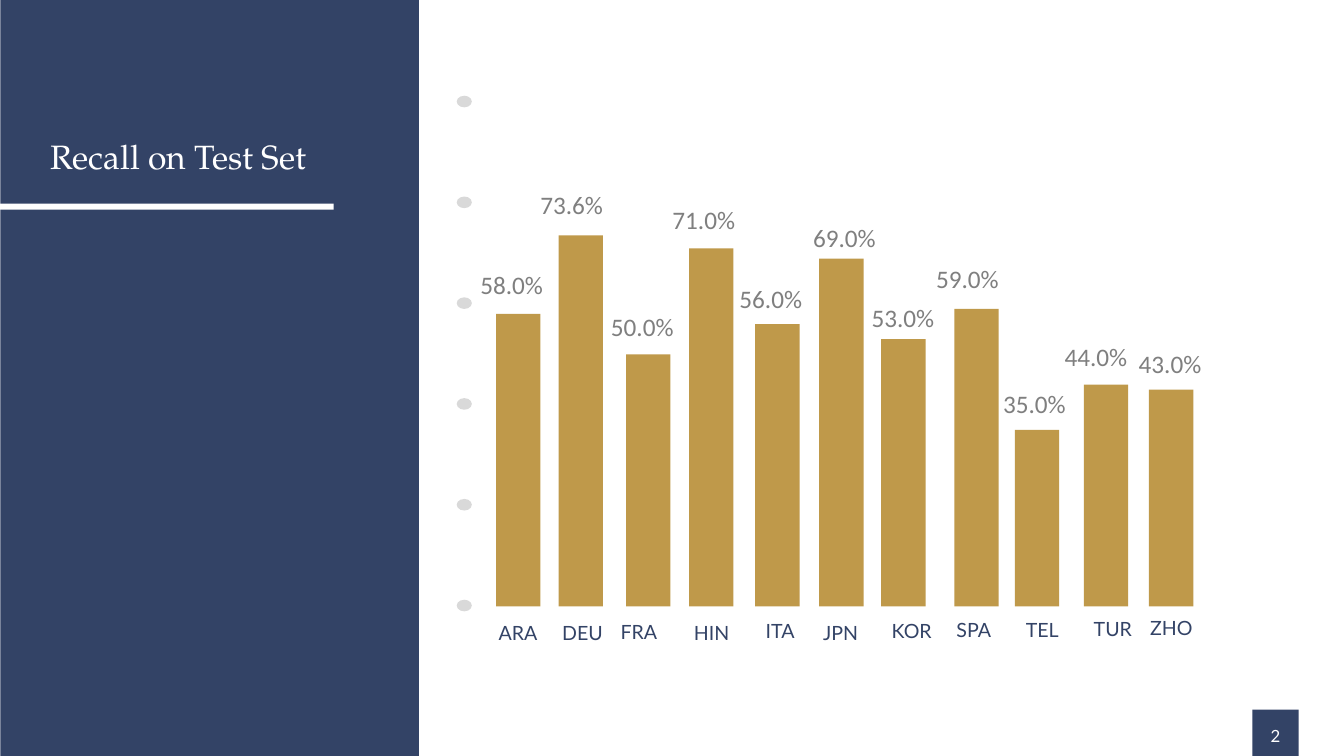
"""Build a slide with a drawn column diagram of recall per language."""
import pptx
import pptx.dml.color
import pptx.enum.shapes
import pptx.enum.text
import pptx.util

NAVY = pptx.dml.color.RGBColor(0x33, 0x43, 0x66)
GOLD = pptx.dml.color.RGBColor(0xBF, 0x99, 0x4A)
GREY = pptx.dml.color.RGBColor(0x7F, 0x7F, 0x7F)
SILVER = pptx.dml.color.RGBColor(0xD9, 0xD9, 0xD9)
WHITE = pptx.dml.color.RGBColor(0xFF, 0xFF, 0xFF)

SHAPE = pptx.enum.shapes.MSO_SHAPE
ALIGN = pptx.enum.text.PP_ALIGN
FIT = pptx.enum.text.MSO_AUTO_SIZE
WIDTH, HEIGHT = 26.66, 15
BASELINE = 12.03
BAR_WIDTH = 0.88
INCHES_PER_PERCENT = 0.1
TICK_TOP, TICK_STEP, TICK_COUNT = 1.9, 2, 6

# Language, recall, bar left, name left, name top, value left, value top
LANGUAGES = [
    ("ARA", 58.0, 9.84, 9.21, 12.27, 9.43, 5.30),
    ("DEU", 73.6, 11.08, 10.49, 12.27, 10.62, 3.71),
    ("FRA", 50.0, 12.42, 11.61, 12.26, 12.02, 6.12),
    ("HIN", 71.0, 13.67, 13.05, 12.27, 13.24, 4.00),
    ("ITA", 56.0, 14.98, 14.41, 12.24, 14.57, 5.57),
    ("JPN", 69.0, 16.25, 15.61, 12.27, 16.03, 4.37),
    ("KOR", 53.0, 17.48, 17.02, 12.23, 17.19, 5.95),
    ("SPA", 59.0, 18.93, 18.25, 12.22, 18.47, 5.18),
    ("TEL", 35.0, 20.13, 19.61, 12.22, 19.80, 7.65),
    ("TUR", 44.0, 21.50, 21.01, 12.20, 21.02, 6.73),
    ("ZHO", 43.0, 22.79, 22.17, 12.18, 22.49, 6.87),
]


def inches(*lengths):
    """Convert lengths in inches to slide units."""
    return [pptx.util.Inches(length) for length in lengths]


def add_block(page, kind, frame, color):
    """Add a flat preset shape without an outline."""
    block = page.shapes.add_shape(kind, *inches(*frame))
    block.shadow.inherit = False
    block.fill.solid()
    block.fill.fore_color.rgb = color
    block.line.fill.background()
    return block


def style_text(para, font, size, color, align):
    """Format the runs and alignment of a paragraph."""
    para.alignment = align
    for span in para.runs:
        span.font.name = font
        span.font.size = pptx.util.Pt(size)
        span.font.color.rgb = color


def add_label(page, text, frame, font, size, color, align, wrap=True):
    """Add a one-line text box that fits its text."""
    box = page.shapes.add_textbox(*inches(*frame))
    box.text_frame.word_wrap = wrap
    box.text_frame.auto_size = FIT.SHAPE_TO_FIT_TEXT
    box.text_frame.text = text
    style_text(box.text_frame.paragraphs[0], font, size, color, align)
    return box


def set_title(page, text):
    """Place the title at the foot of its area on the side panel."""
    title = page.shapes.title
    title.left, title.top, title.width, title.height = inches(0.91, 1.82, 6.02, 1.72)
    frame = title.text_frame
    frame.text = text
    frame.word_wrap = True
    frame.auto_size = FIT.NONE
    frame.vertical_anchor = pptx.enum.text.MSO_ANCHOR.BOTTOM
    style_text(frame.paragraphs[0], "TeX Gyre Pagella", 48, WHITE, ALIGN.LEFT)


def add_page_number(page, number):
    """Add the page number on its square at the lower edge."""
    add_block(page, SHAPE.RECTANGLE, (24.84, HEIGHT - 0.92, 0.92, 0.92), NAVY)
    box = add_label(page, number, (24.92, HEIGHT - 0.92, 0.76, 0.76),
                    "Lato", 24, WHITE, ALIGN.CENTER)
    frame = box.text_frame
    frame.margin_left, frame.margin_right = inches(0.24, 0.24)
    frame.margin_top, frame.margin_bottom = inches(0.12, 0.12)
    frame.paragraphs[0].line_spacing = pptx.util.Pt(43)


def add_ticks(page):
    """Add the evenly spaced dots of the value axis."""
    for index in range(TICK_COUNT):
        top = TICK_TOP + index * TICK_STEP
        add_block(page, SHAPE.OVAL, (9.06, top, 0.3, 0.23), SILVER)


def add_column(page, name, recall, bar_left, name_left, name_top, value_left, value_top):
    """Add one language's bar with its name and value."""
    height = recall * INCHES_PER_PERCENT
    add_block(page, SHAPE.RECTANGLE,
              (bar_left, BASELINE - height, BAR_WIDTH, height), GOLD)
    add_label(page, name, (name_left, name_top, 2.13, 0.57),
              "Lato", 28, NAVY, ALIGN.CENTER)
    add_label(page, f"{recall:.1f}%", (value_left, value_top, 1.46, 0.71),
              "Calibri", 36, GREY, ALIGN.LEFT, wrap=False)


def main():
    """Build and save the slide."""
    deck = pptx.Presentation()
    deck.slide_width, deck.slide_height = inches(WIDTH, HEIGHT)
    page = deck.slides.add_slide(deck.slide_layouts.get_by_name("Title Only"))
    panel = add_block(page, SHAPE.RECTANGLE, (0.01, 0, 8.3, HEIGHT), NAVY)
    page.shapes.title.element.addprevious(panel.element)
    set_title(page, "Recall on Test Set")
    add_page_number(page, "2")
    add_block(page, SHAPE.RECTANGLE, (0, 4.04, 6.62, 0.12), WHITE)
    add_ticks(page)
    for language in LANGUAGES:
        add_column(page, *language)
    deck.save("out.pptx")


if __name__ == "__main__":
    main()
